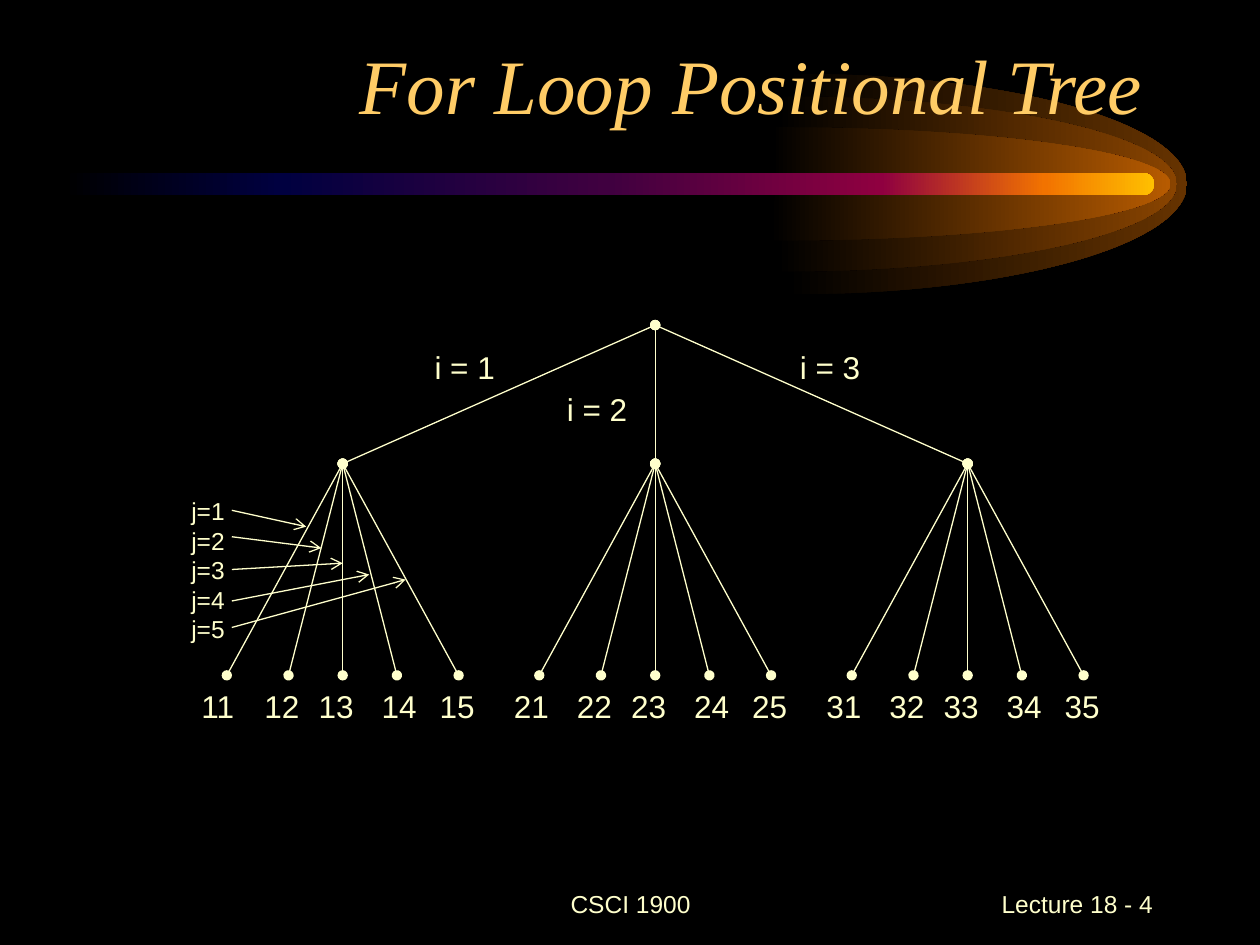
from dataclasses import dataclass

from lxml.etree import SubElement
from pptx import Presentation
from pptx.dml.color import RGBColor
from pptx.enum.shapes import MSO_CONNECTOR, MSO_SHAPE
from pptx.enum.text import MSO_ANCHOR, MSO_AUTO_SIZE, PP_ALIGN
from pptx.oxml.ns import qn
from pptx.util import Inches, Pt

COLORS = {"back": "000000", "text": "FFFFCC", "title": "FFCC66"}
STREAK = [(0, "000000"), (20, "000040"), (50, "400040"),
          (75, "8F0040"), (90, "F27300"), (100, "FFBF00")]


@dataclass
class Glow:
    left: float
    high: float
    color: str


@dataclass
class Label:
    text: str
    left: float
    top: float
    width: float
    height: float = 0.4
    size: int = 18
    align: PP_ALIGN = PP_ALIGN.LEFT
    anchor: MSO_ANCHOR = MSO_ANCHOR.TOP


@dataclass
class Edge:
    start: tuple[float, float]
    end: tuple[float, float]
    head: str = "oval"
    tail: str = "oval"


GLOWS = [Glow(6.29, 1.75, "663300"), Glow(6.21, 1.39, "894400"),
         Glow(6.16, 0.9, "B75B00")]
AXIS, REACH, LIP = 1.46, 3.13, 0.05
BEND = 0.55  # handle length of a quarter ellipse

# Tree geometry
ROOT = (5.2, 2.58)
MID, LEAF = 3.68, 5.36
GAP = 2.48
SPREAD = [-0.92, -0.43, 0, 0.43, 0.92]
SHIFTS = [-1.22, -0.72, -0.29, 0.21, 0.67]
BRANCHES = [(3.35, 2.71), (4.4, 3.05), (6.25, 2.71)]
ARROWS = [(4.05, 2.43, 4.18), (4.26, 2.55, 4.35), (4.52, 2.72, 4.47),
          (4.77, 2.93, 4.56), (4.98, 3.22, 4.6)]


def style(frame, size: int, color: str, font: str, italic: bool = False) -> None:
    for para in frame.paragraphs:
        for run in para.runs:
            run.font.size = Pt(size)
            run.font.name = font
            run.font.italic = italic
            run.font.color.rgb = RGBColor.from_string(COLORS[color])


def shade(shape, stops: list[tuple[int, str]]) -> None:
    """Give a shape a left-to-right gradient without outline or shadow."""
    shape.shadow.inherit = False
    shape.line.fill.background()
    shape.fill.gradient()
    shape.fill.gradient_angle = 0
    items = shape._element.spPr.find(qn("a:gradFill")).find(qn("a:gsLst"))
    for old in list(items):
        items.remove(old)
    for place, color in stops:
        stop = SubElement(items, qn("a:gs"), pos=str(place * 1000))
        SubElement(stop, qn("a:srgbClr"), val=color)


def draw_glow(slide, glow: Glow) -> None:
    """Draw a half ellipse: a box outline whose right side is bent."""
    half, left = glow.high / 2, glow.left
    top, low, right = AXIS - half, AXIS + half, left + REACH
    points = [(left, top), (right, AXIS), (left, low),
              (left - LIP, low), (left, AXIS)]
    spots = [(Inches(x), Inches(y)) for x, y in points]
    pen = slide.shapes.build_freeform(*spots[0])
    pen.add_line_segments(spots[1:], close=True)
    shape = pen.convert_to_shape()

    near, rise = left + BEND * REACH, BEND * half
    curves = [[(near, top), (right, AXIS - rise), (right, AXIS)],
              [(right, AXIS + rise), (near, low), (left, low)]]
    sides = list(shape._element.spPr.iter(qn("a:lnTo")))
    for side, curve in zip(sides, curves):
        bend = SubElement(side.getparent(), qn("a:cubicBezTo"))
        for x, y in curve:
            SubElement(bend, qn("a:pt"), x=str(Inches(x) - shape.left),
                       y=str(Inches(y) - shape.top))
        side.getparent().replace(side, bend)
    shade(shape, [(0, COLORS["back"]), (100, glow.color)])


def draw_label(slide, label: Label) -> None:
    box = slide.shapes.add_textbox(Inches(label.left), Inches(label.top),
                                   Inches(label.width), Inches(label.height))
    frame = box.text_frame
    frame.word_wrap = True
    frame.vertical_anchor = label.anchor
    para = frame.paragraphs[0]
    para.text = label.text
    para.alignment = label.align
    style(frame, label.size, "text", "Arial")


def draw_edge(slide, edge: Edge) -> None:
    line = slide.shapes.add_connector(
        MSO_CONNECTOR.STRAIGHT,
        *[Inches(value) for value in edge.start + edge.end])
    line.line.width = Pt(0.75)
    line.line.color.rgb = RGBColor.from_string(COLORS["text"])
    props = line._element.spPr
    stroke = props.find(qn("a:ln"))
    SubElement(stroke, qn("a:headEnd"), type=edge.head)
    SubElement(stroke, qn("a:tailEnd"), type=edge.tail)
    SubElement(props, qn("a:effectLst"))


def draw_tree(slide) -> None:
    for row, (left, top) in enumerate(BRANCHES, 1):
        node = (ROOT[0] + (row - 2) * GAP, MID)
        draw_edge(slide, Edge(ROOT, node))
        draw_label(slide, Label(f"i = {row}", left, top, 1.09))
        for col, (step, shift) in enumerate(zip(SPREAD, SHIFTS), 1):
            draw_edge(slide, Edge(node, (node[0] + step, LEAF)))
            draw_label(slide, Label(f"{row}{col}", node[0] + shift, 5.4, 0.59))


def main() -> None:
    deck = Presentation()
    deck.slide_width, deck.slide_height = Inches(10), Inches(7.5)
    slide = deck.slides.add_slide(deck.slide_layouts[5])
    slide.background.fill.solid()
    slide.background.fill.fore_color.rgb = RGBColor.from_string(COLORS["back"])

    # Comet behind the title
    for glow in GLOWS:
        draw_glow(slide, glow)
    streak = slide.shapes.add_shape(MSO_SHAPE.ROUNDED_RECTANGLE, Inches(0.5),
                                    Inches(1.37), Inches(8.66), Inches(0.18))
    streak.adjustments[0] = 0.5
    shade(streak, STREAK)

    # Footer
    draw_label(slide, Label("CSCI 1900", 3.42, 6.92, 3.17, 0.5, 14,
                            PP_ALIGN.CENTER, MSO_ANCHOR.MIDDLE))
    draw_label(slide, Label("Lecture 18 - 4", 7.17, 6.92, 2.08, 0.5, 14,
                            PP_ALIGN.RIGHT, MSO_ANCHOR.MIDDLE))

    # Title, brought in front of the comet
    title = slide.shapes.title
    title.left, title.top = Inches(0.67), Inches(0.25)
    title.width, title.height = Inches(8.5), Inches(0.83)
    frame = title.text_frame
    frame.text = "For Loop Positional Tree"
    frame.auto_size = MSO_AUTO_SIZE.NONE
    frame.vertical_anchor = MSO_ANCHOR.BOTTOM
    frame.paragraphs[0].alignment = PP_ALIGN.RIGHT
    style(frame, 44, "title", "Times New Roman", italic=True)
    slide.shapes._spTree.append(title._element)

    # Tree and the arrows that name the inner loop
    draw_tree(slide)
    names = "\v".join(f"j={col}" for col in range(1, 6))
    draw_label(slide, Label(names, 1.42, 3.89, 0.67, 1.26, 14))
    for top, tip, level in ARROWS:
        draw_edge(slide, Edge((1.84, top), (tip, level), "none", "arrow"))

    deck.save("out.pptx")


if __name__ == "__main__":
    main()
